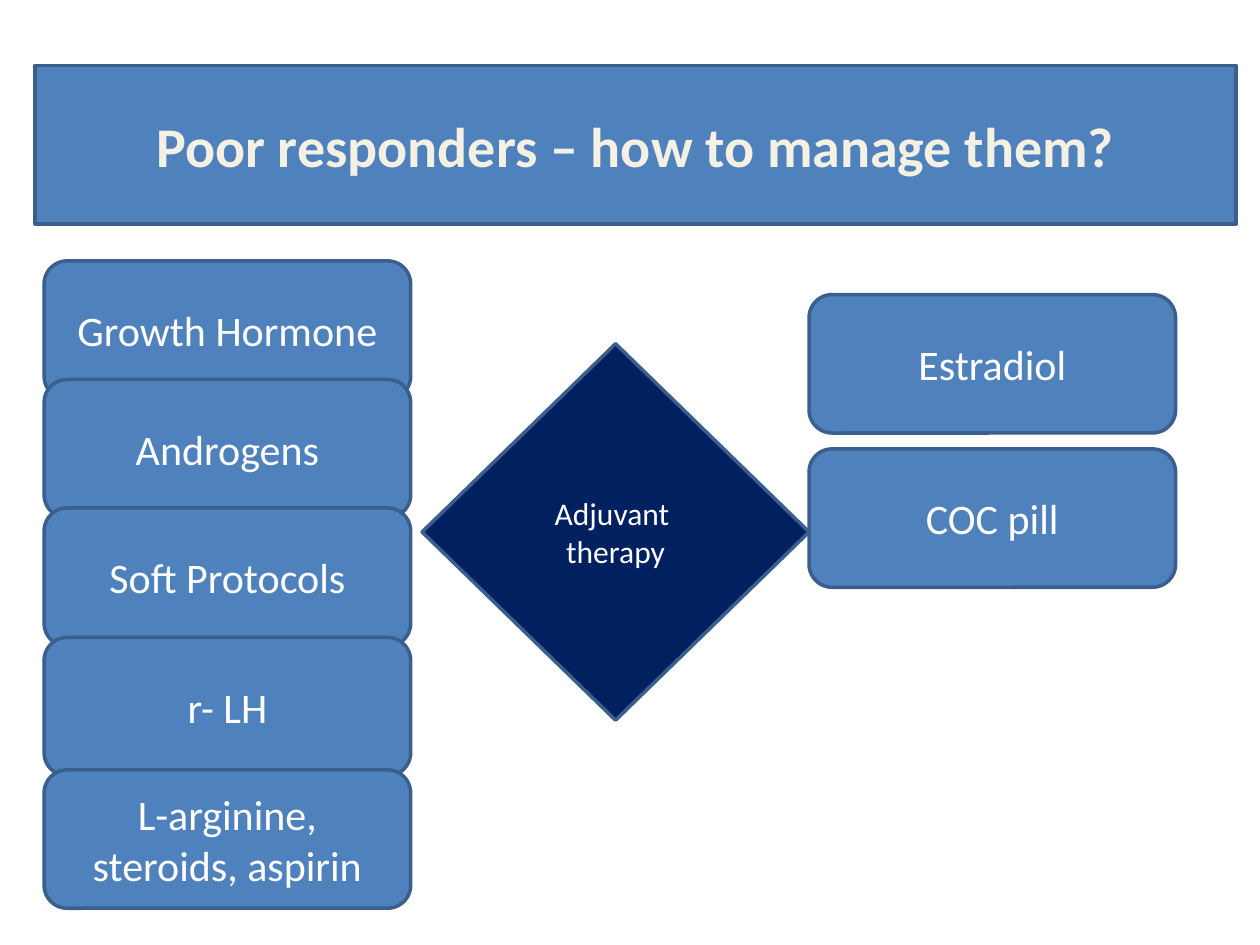
from pptx import Presentation
from pptx.dml.color import RGBColor
from pptx.enum.shapes import MSO_SHAPE
from pptx.enum.text import MSO_ANCHOR, MSO_AUTO_SIZE, PP_ALIGN
from pptx.util import Cm, Pt

DIAMOND = MSO_SHAPE.DIAMOND
ROUNDED = MSO_SHAPE.ROUNDED_RECTANGLE
MIDDLE = MSO_ANCHOR.MIDDLE
CENTER = PP_ALIGN.CENTER
NO_AUTOFIT = MSO_AUTO_SIZE.NONE

FONT = "Calibri"
BLUE, NAVY, OUTLINE = "4F81BD", "002060", "3A5F8C"
WHITE, CREAM = "FFFFFF", "F4F1E3"

OPTION_WIDTH, OPTION_HEIGHT = 7.39, 2.79
LEFT_COLUMN, RIGHT_COLUMN = 0.89, 16.31
LEFT_OPTIONS = [
    ("Growth Hormone", 5.26),
    ("Androgens", 7.65),
    ("Soft Protocols", 10.24),
    ("r- LH", 12.85),
    ("L-arginine, steroids, aspirin", 15.52),
]
RIGHT_OPTIONS = [("COC pill", 9.05), ("Estradiol", 5.94)]


def color(hex_code):
    return RGBColor.from_string(hex_code)


def paint(shape, fill):
    shape.fill.solid()
    shape.fill.fore_color.rgb = color(fill)
    shape.line.color.rgb = color(OUTLINE)
    shape.line.width = Pt(2)


def write(shape, lines, size, text_color=WHITE, bold=False):
    """Fill a shape with centred paragraphs, one per line."""
    frame = shape.text_frame
    frame.word_wrap = True
    frame.auto_size = NO_AUTOFIT
    frame.vertical_anchor = MIDDLE
    for index, line in enumerate(lines):
        para = frame.add_paragraph() if index else frame.paragraphs[0]
        para.alignment = CENTER
        span = para.add_run()
        span.text = line
        span.font.name = FONT
        span.font.size = Pt(size)
        span.font.bold = bold
        span.font.color.rgb = color(text_color)


def set_title(page, text):
    title = page.shapes.title
    title.left, title.top = Cm(0.71), Cm(1.32)
    title.width, title.height = Cm(24.21), Cm(3.2)
    paint(title, BLUE)
    write(title, [text], 32, CREAM, bold=True)


def add_box(page, kind, left, top, width, height, fill, lines, size):
    box = page.shapes.add_shape(kind, Cm(left), Cm(top), Cm(width), Cm(height))
    box.shadow.inherit = False
    paint(box, fill)
    write(box, lines, size)


def add_options(page, left, options):
    for label, top in options:
        add_box(page, ROUNDED, left, top, OPTION_WIDTH, OPTION_HEIGHT,
                BLUE, [label], 24)


def main():
    deck = Presentation()
    deck.slide_width, deck.slide_height = Cm(25.4), Cm(19.05)
    title_only = deck.slide_layouts[5]
    page = deck.slides.add_slide(title_only)

    set_title(page, "Poor responders – how to manage them?")
    add_box(page, DIAMOND, 8.51, 6.93, 7.8, 7.59, NAVY,
            ["Adjuvant ", "therapy"], 18)
    add_options(page, LEFT_COLUMN, LEFT_OPTIONS)
    add_options(page, RIGHT_COLUMN, RIGHT_OPTIONS)

    deck.save("out.pptx")


if __name__ == "__main__":
    main()
